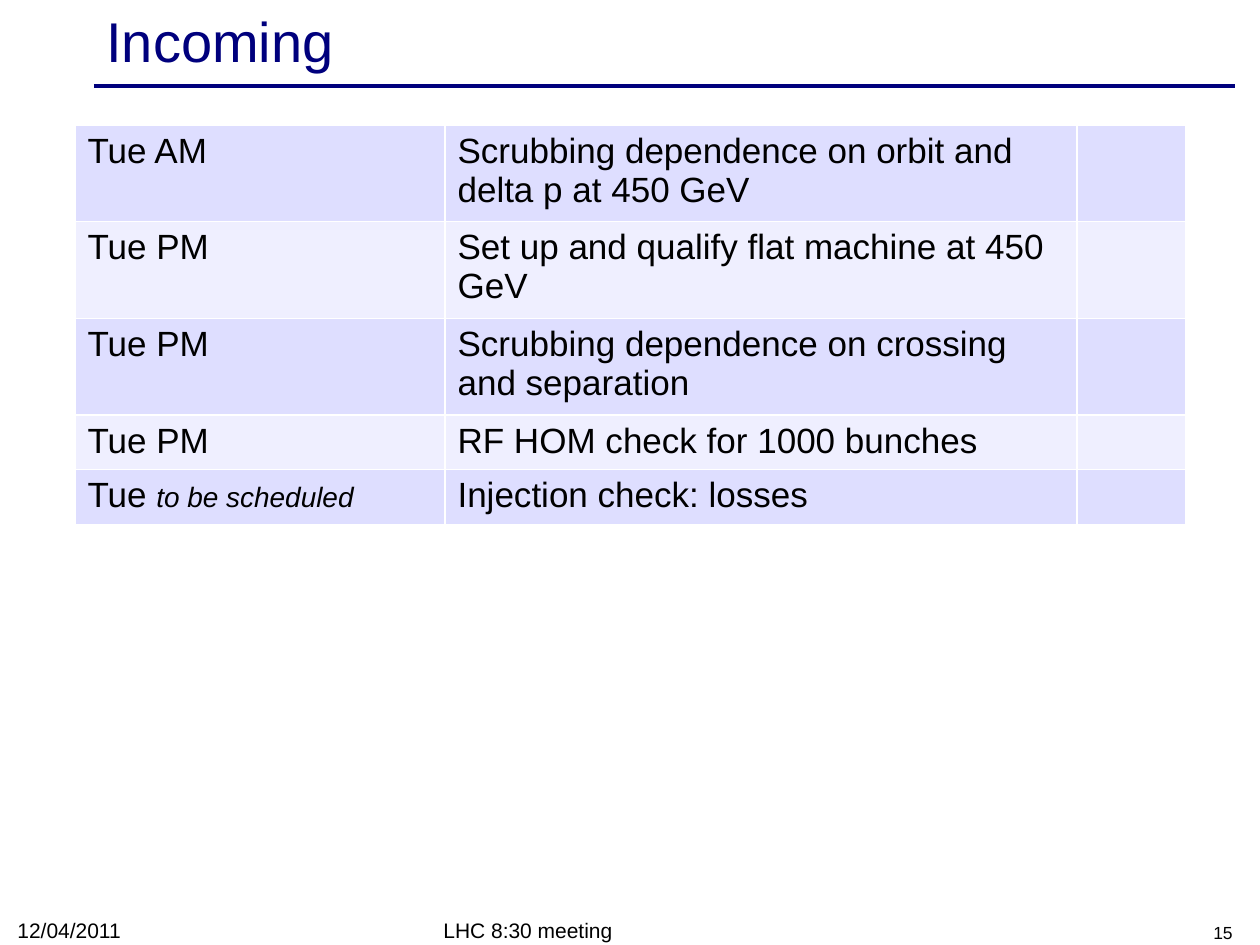
from lxml import etree
from pptx import Presentation
from pptx.dml.color import RGBColor
from pptx.enum.shapes import MSO_CONNECTOR
from pptx.enum.text import MSO_ANCHOR, PP_ALIGN
from pptx.oxml.ns import qn
from pptx.util import Pt

EMU_PER_PX = 914400 / 126
BLANK_LAYOUT = 6
STRAIGHT = MSO_CONNECTOR.STRAIGHT
LEFT, RIGHT = PP_ALIGN.LEFT, PP_ALIGN.RIGHT
MIDDLE, BOTTOM = MSO_ANCHOR.MIDDLE, MSO_ANCHOR.BOTTOM
FONT = "Arial"
COLORS = {
    "navy": "00007D",
    "black": "000000",
    "white": "FFFFFF",
    "band_dark": "DEDEFF",
    "band_light": "EFEFFF",
}
BORDER_TAGS = ("a:lnL", "a:lnR", "a:lnT", "a:lnB")

COLUMN_WIDTHS = (370, 632, 109)
SCHEDULE = [
    (90, "Tue AM", "", "Scrubbing dependence on orbit and delta p at 450 GeV"),
    (91, "Tue PM", "", "Set up and qualify flat machine at 450 GeV"),
    (91, "Tue PM", "", "Scrubbing dependence on crossing and separation"),
    (52, "Tue PM", "", "RF HOM check for 1000 bunches"),
    (51, "Tue ", "to be scheduled", "Injection check: losses"),
]


def px(length):
    return round(length * EMU_PER_PX)


def rgb(name):
    return RGBColor.from_string(COLORS[name])


def add_text(paragraph, text, size=20, color="black", italic=False, align=LEFT):
    paragraph.alignment = align
    run = paragraph.add_run()
    run.text = text
    run.font.name = FONT
    run.font.size = Pt(size)
    run.font.italic = italic
    run.font.color.rgb = rgb(color)


def set_borders(cell, color, width):
    """Draw a solid line on all four sides; call before filling the cell."""
    properties = cell._tc.get_or_add_tcPr()
    for tag in BORDER_TAGS:
        line = etree.SubElement(properties, qn(tag), w=str(Pt(width)))
        fill = etree.SubElement(line, qn("a:solidFill"))
        etree.SubElement(fill, qn("a:srgbClr"), val=COLORS[color])


class SlideBuilder:
    def __init__(self, presentation):
        layout = presentation.slide_layouts[BLANK_LAYOUT]
        self.slide = presentation.slides.add_slide(layout)

    def line(self, x1, y1, x2, y2, color="navy", width=2):
        connector = self.slide.shapes.add_connector(
            STRAIGHT, px(x1), px(y1), px(x2), px(y2))
        connector.line.color.rgb = rgb(color)
        connector.line.width = Pt(width)
        etree.SubElement(connector._element.spPr, qn("a:effectLst"))

    def text(self, left, top, width, height, text, anchor=BOTTOM, **style):
        box = self.slide.shapes.add_textbox(
            px(left), px(top), px(width), px(height))
        frame = box.text_frame
        frame.word_wrap = True
        frame.vertical_anchor = anchor
        add_text(frame.paragraphs[0], text, **style)

    def schedule(self, left, top, widths, rows):
        heights = [row[0] for row in rows]
        table = self.slide.shapes.add_table(
            len(rows), len(widths), px(left), px(top),
            px(sum(widths)), px(sum(heights))).table
        for column, width in zip(table.columns, widths):
            column.width = px(width)
        for index, (height, day, remark, task) in enumerate(rows):
            row = table.rows[index]
            row.height = px(height)
            band = "band_light" if index % 2 else "band_dark"
            for cell in row.cells:
                set_borders(cell, "white", 1)
                cell.fill.solid()
                cell.fill.fore_color.rgb = rgb(band)
            day_paragraph, task_paragraph = (
                row.cells[column].text_frame.paragraphs[0] for column in (0, 1))
            add_text(day_paragraph, day)
            if remark:
                add_text(day_paragraph, remark, size=16, italic=True)
            add_text(task_paragraph, task)


def main():
    presentation = Presentation()
    presentation.slide_width = px(1260)
    presentation.slide_height = px(945)
    builder = SlideBuilder(presentation)
    builder.line(94, 86, 1235, 86)
    builder.text(94, 4, 1134, 72, "Incoming", anchor=MIDDLE, size=32, color="navy")
    builder.text(431, 913, 399, 36, "LHC 8:30 meeting", size=12)
    builder.text(951, 913, 294, 36, "15", size=10, align=RIGHT)
    builder.text(5, 913, 294, 36, "12/04/2011", size=12)
    builder.schedule(75, 125, COLUMN_WIDTHS, SCHEDULE)
    presentation.save("out.pptx")


if __name__ == "__main__":
    main()
